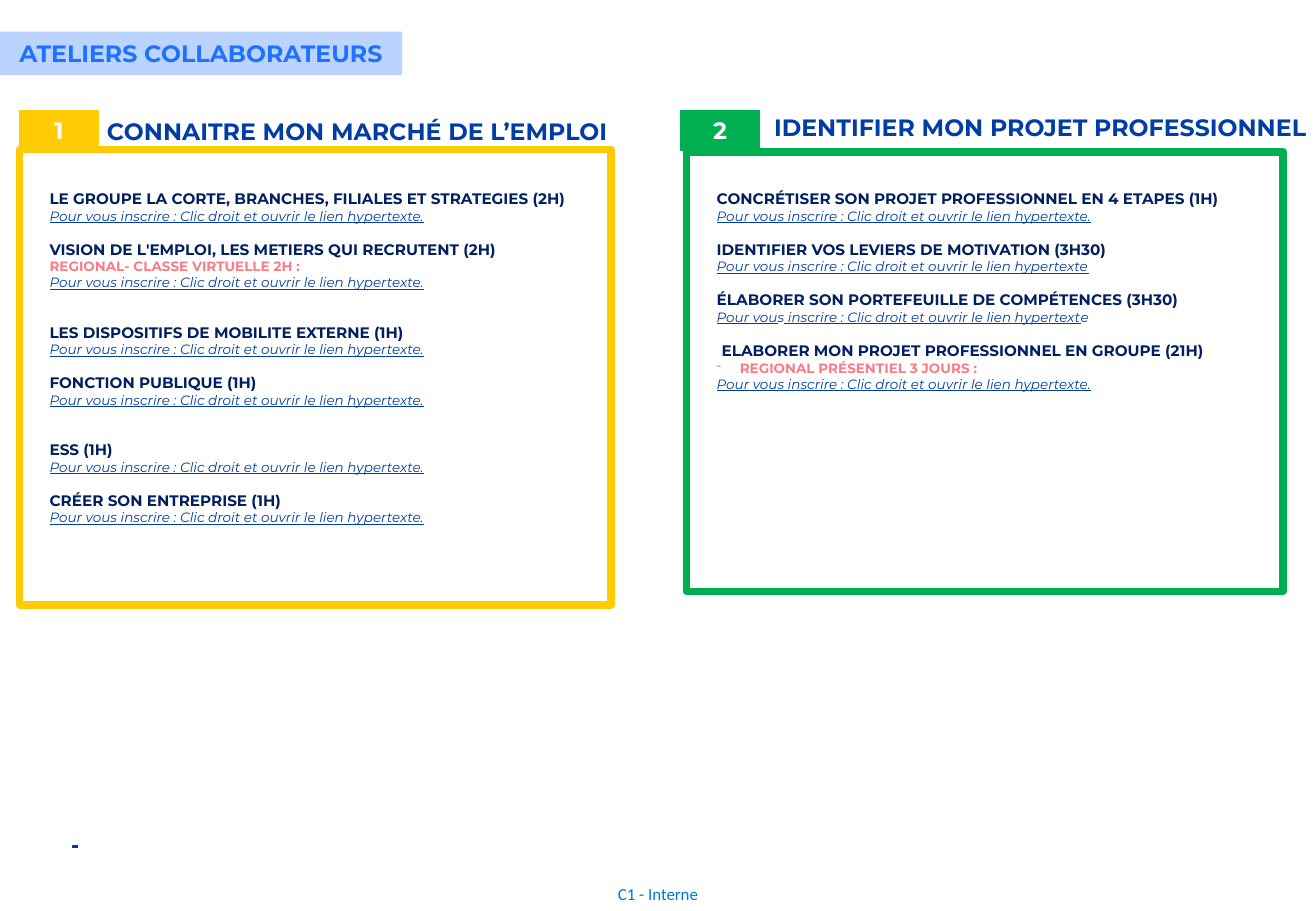
from lxml.etree import SubElement
from pptx import Presentation
from pptx.dml.color import RGBColor
from pptx.enum.shapes import MSO_CONNECTOR, MSO_SHAPE
from pptx.enum.text import MSO_ANCHOR, MSO_AUTO_SIZE, PP_ALIGN
from pptx.oxml.ns import qn
from pptx.util import Inches, Pt

NAVY, BLUE, PINK = "002060", "003DA5", "F77C86"
YELLOW, GREEN, WHITE = "FFCB05", "00B050", "FFFFFF"
SIGN_UP = "Pour vous inscrire : Clic droit et ouvrir le lien hypertexte"
FULL_LINK = [(SIGN_UP + ".", True)]
BLANK_LINE = 9.6

MARKET_WORKSHOPS = [
    dict(name="LE GROUPE LA CORTE, BRANCHES, FILIALES ET STRATEGIES (2H)"),
    dict(name="VISION DE L'EMPLOI, LES METIERS QUI RECRUTENT (2H)",
         regional="REGIONAL- CLASSE VIRTUELLE 2H :"),
    dict(name="LES DISPOSITIFS DE MOBILITE EXTERNE (1H)", gap=2),
    dict(name="FONCTION PUBLIQUE (1H)"),
    dict(name="ESS (1H)", gap=2),
    dict(name="CRÉER SON ENTREPRISE (1H)"),
]
PROJECT_WORKSHOPS = [
    dict(name="CONCRÉTISER SON PROJET PROFESSIONNEL EN 4 ETAPES (1H)"),
    dict(name="IDENTIFIER VOS LEVIERS DE MOTIVATION (3H30)", link=[(SIGN_UP, True)]),
    dict(name="ÉLABORER SON PORTEFEUILLE DE COMPÉTENCES (3H30)",
         link=[("Pour vou", True), ("s", False),
               (" inscrire : Clic droit et ouvrir le lien hypertext", True), ("e", False)]),
    dict(name="ELABORER MON PROJET PROFESSIONNEL EN GROUPE (21H)", indent=0.04,
         regional="REGIONAL PRÉSENTIEL 3 JOURS :", dash=True),
]


def rgb(value):
    return RGBColor.from_string(value)


def style(font, size, color, bold=False, italic=False, underline=False, face="Montserrat"):
    font.name, font.size, font.bold = face, Pt(size), bold
    font.italic, font.underline = italic, underline
    font.color.rgb = rgb(color)


def indent(paragraph, left, hanging=0.0):
    properties = paragraph._p.get_or_add_pPr()
    properties.set("marL", str(Inches(left)))
    properties.set("indent", str(Inches(-hanging)))
    return properties


def add_text(slide, left, top, width, height, margin=True):
    box = slide.shapes.add_textbox(Inches(left), Inches(top), Inches(width), Inches(height))
    frame = box.text_frame
    frame.word_wrap = True
    if not margin:
        frame.margin_left = frame.margin_right = frame.margin_top = frame.margin_bottom = 0
    return frame


def add_rectangle(slide, left, top, width, height, line, weight, fill=None):
    rectangle = slide.shapes.add_shape(
        MSO_SHAPE.RECTANGLE, Inches(left), Inches(top), Inches(width), Inches(height))
    rectangle.shadow.inherit = False
    rectangle.line.color.rgb = rgb(line)
    rectangle.line.width = Pt(weight)
    if fill:
        rectangle.fill.solid()
        rectangle.fill.fore_color.rgb = rgb(fill)
    else:
        rectangle.fill.background()
    return rectangle


def center(frame, text, size, color, **options):
    frame.text = text
    frame.vertical_anchor = MSO_ANCHOR.MIDDLE
    frame.paragraphs[0].alignment = PP_ALIGN.CENTER
    style(frame.paragraphs[0].runs[0].font, size, color, **options)


def add_banner(slide, left, top, width, height):
    title = slide.shapes.title
    title.left, title.top = Inches(left), Inches(top)
    title.width, title.height = Inches(width), Inches(height)
    SubElement(title._element.spPr, qn("a:prstGeom"), prst="homePlate")
    title.fill.solid()
    title.fill.fore_color.rgb = rgb("BAD4FF")
    title.text_frame.auto_size = MSO_AUTO_SIZE.NONE
    center(title.text_frame, "ATELIERS COLLABORATEURS", 14, "1F72FF", bold=True)


def add_workshops(frame, workshops):
    paragraph = frame.paragraphs[0]
    for index, workshop in enumerate(workshops):
        if index:
            paragraph = frame.add_paragraph()
            paragraph.space_before = Pt(BLANK_LINE * workshop.get("gap", 1))
        paragraph.text = workshop["name"]
        indent(paragraph, workshop.get("indent", 0))
        style(paragraph.runs[0].font, 9, NAVY, bold=True)
        if "regional" in workshop:
            regional = frame.add_paragraph()
            regional.text = workshop["regional"]
            if workshop.get("dash"):
                SubElement(indent(regional, 0.19, 0.19), qn("a:buChar"), char="-")
            style(regional.runs[0].font, 8, PINK, bold=True)
        sign_up = frame.add_paragraph()
        for text, underline in workshop.get("link", FULL_LINK):
            run = sign_up.add_run()
            run.text = text
            style(run.font, 8, BLUE, italic=True, underline=underline)


def add_panel(slide, left, top, width, height, number, heading, color, workshops,
              badge_shift=0.0, heading_drop=0.05, frame_drop=0.32):
    add_rectangle(slide, left, top + frame_drop, width, height - frame_drop, color, 4.5)
    badge = add_rectangle(slide, left + badge_shift, top, 0.65, 0.33, color, 1, color)
    center(badge.text_frame, number, 14, WHITE, bold=True)

    headline = add_text(slide, left + 0.72, top + heading_drop, 4.45, 0.3, margin=False)
    headline.text = heading
    headline.paragraphs[0].line_spacing = Pt(17)
    style(headline.paragraphs[0].runs[0].font, 14, BLUE, bold=True)

    add_workshops(add_text(slide, left + 0.15, top + 0.6, 5, height - 1), workshops)


def add_footer(slide, left, top, width, height):
    dash = slide.shapes.add_connector(
        MSO_CONNECTOR.STRAIGHT, Inches(0.59), Inches(top - 0.24), Inches(0.64), Inches(top - 0.24))
    dash.line.color.rgb = rgb(BLUE)
    dash.line.width = Pt(1.5)
    SubElement(dash._element.spPr, qn("a:effectLst"))
    frame = add_text(slide, left, top, width, height, margin=False)
    center(frame, "C1 - Interne", 10, "0078D7", face="Calibri")


def main():
    presentation = Presentation()
    presentation.slide_width, presentation.slide_height = Inches(10.83), Inches(7.5)
    slide = presentation.slides.add_slide(presentation.slide_layouts[5])
    add_banner(slide, 0, 0.26, 3.31, 0.36)
    add_panel(slide, 0.16, 0.91, 4.87, 4.07, "1", "CONNAITRE MON MARCHÉ DE L’EMPLOI",
              YELLOW, MARKET_WORKSHOPS)
    add_panel(slide, 5.65, 0.91, 4.91, 3.96, "2", "IDENTIFIER MON PROJET PROFESSIONNEL",
              GREEN, PROJECT_WORKSHOPS, badge_shift=-0.05, heading_drop=0.02, frame_drop=0.34)
    add_footer(slide, 4.93, 7.21, 0.97, 0.29)
    presentation.save("out.pptx")


if __name__ == "__main__":
    main()
